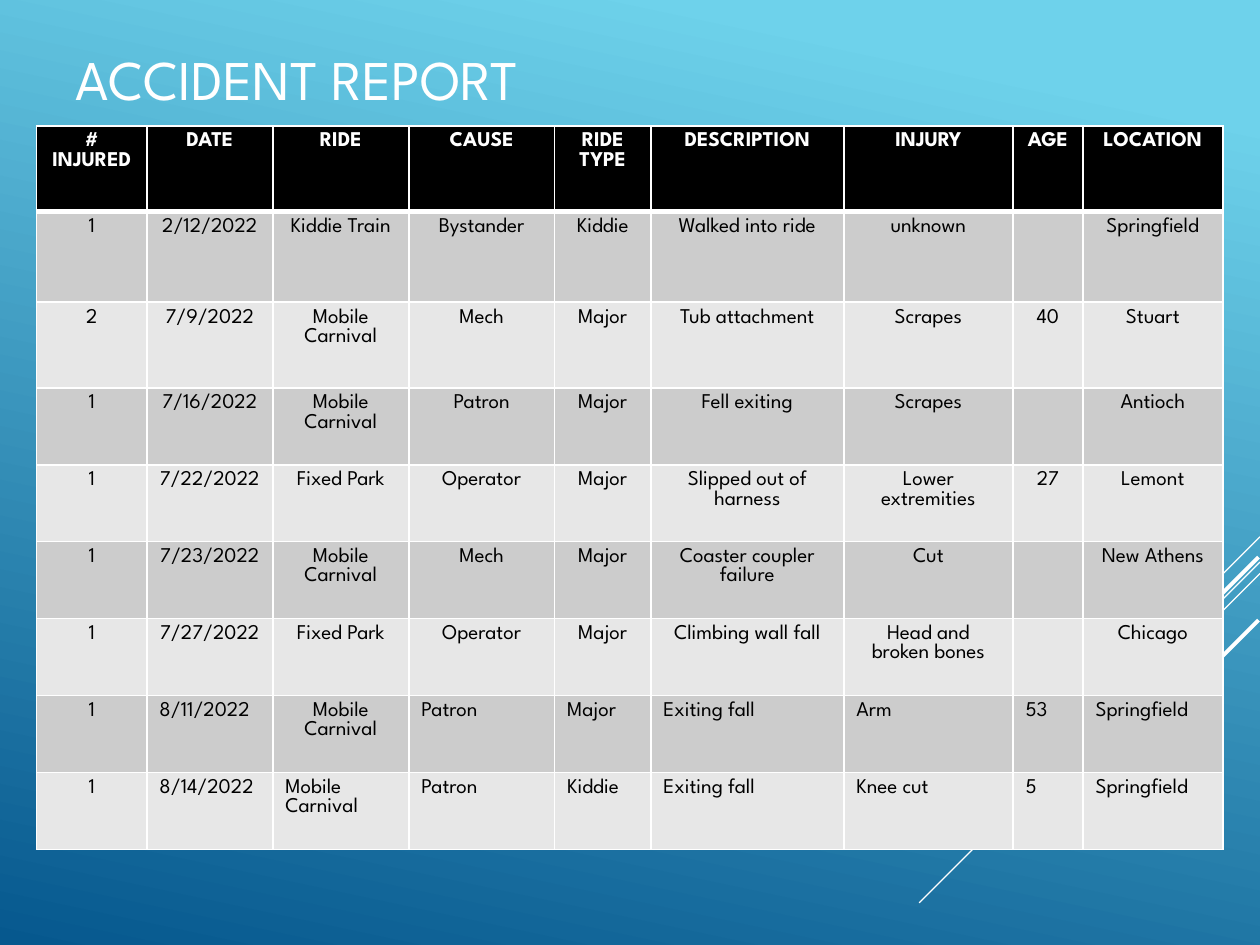
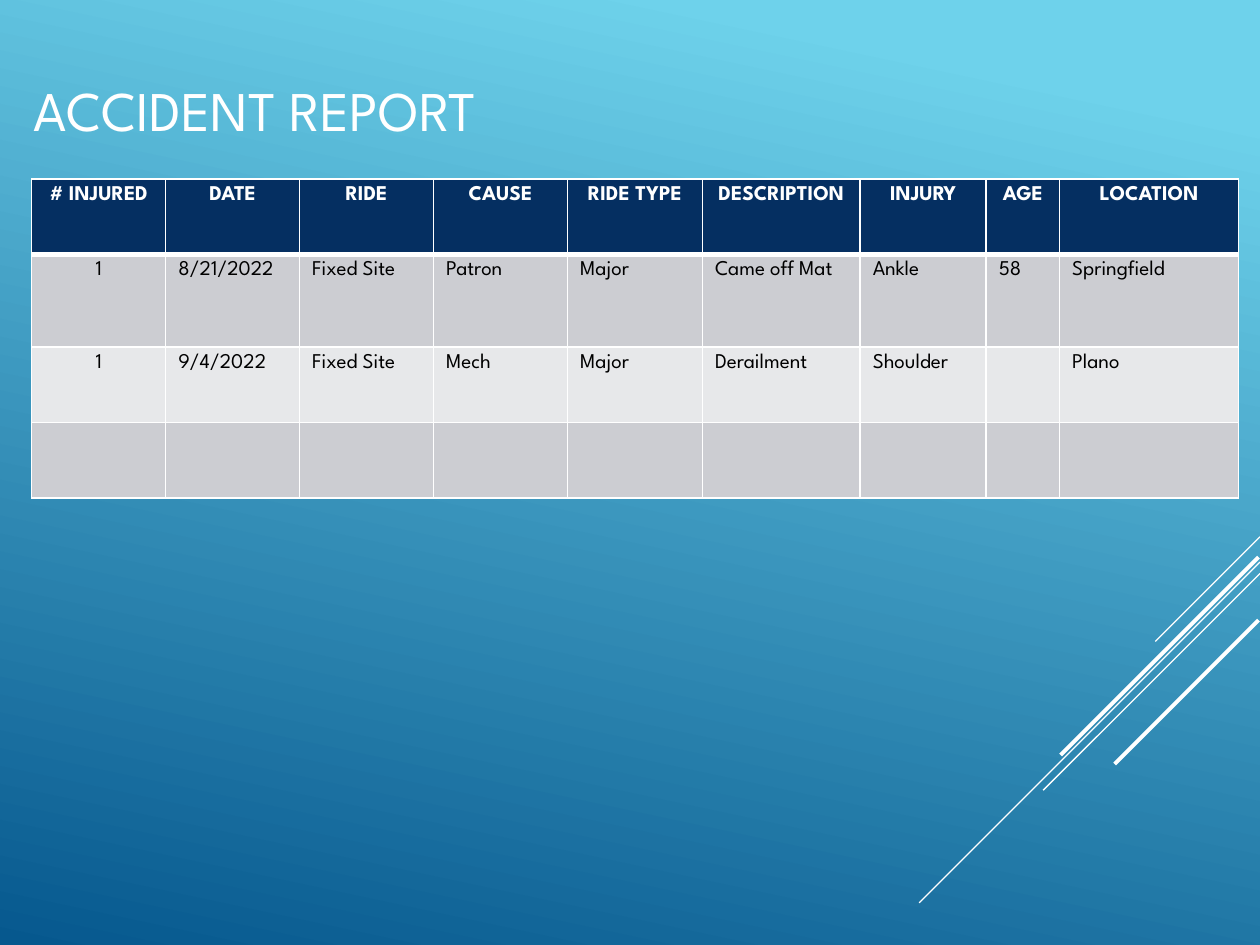
from pptx import Presentation
from pptx.dml.color import RGBColor as Rgb
from pptx.enum.shapes import MSO_CONNECTOR as Link
from pptx.enum.text import MSO_ANCHOR as Anchor, PP_ALIGN as Align
from pptx.oxml import parse_xml as to_xml
from pptx.oxml.ns import nsdecls
from pptx.util import Cm, Pt

WHITE = Rgb(0xFF, 0xFF, 0xFF)
BLACK = Rgb(0, 0, 0)
NAVY = Rgb(0x05, 0x2F, 0x61)
SKY = Rgb(0x6E, 0xD2, 0xEB)
DEEP = Rgb(0x06, 0x58, 0x8E)
GREYS = Rgb(0xCC, 0xCC, 0xCC), Rgb(0xE7, 0xE7, 0xE7)
COOLS = Rgb(0xCC, 0xCD, 0xD2), Rgb(0xE7, 0xE8, 0xEA)

FACE = "League Spartan"
TITLE = {"name": FACE, "size": Pt(32), "bold": False}
HEAD = {"name": FACE, "size": Pt(12), "bold": True}
BODY = {"name": FACE, "size": Pt(12), "bold": False}
SIDES = {"c": Align.CENTER, "l": Align.LEFT}
MID = "c" * 9
FIRST = "c" + "l" * 8
MIXED = "clc" + "l" * 6

HEADS = ("# INJURED", "DATE", "RIDE", "CAUSE", "RIDE TYPE",
         "DESCRIPTION", "INJURY", "AGE", "LOCATION")

PAGES = [
    {
        "title": "ACCIDENT REPORT", "box": (1.27, 0.2, 22.86, 2.74),
        "at": (0.74, 2.54), "top": BLACK, "bands": GREYS,
        "cols": (2.22, 2.54, 2.74, 2.94, 1.94, 3.89, 3.41, 1.41, 2.82),
        "rows": (1.73, 1.82, 1.73) + (1.55,) * 6,
        "data": [
            (MID, "1", "2/12/2022", "Kiddie Train", "Bystander", "Kiddie",
             "Walked into ride", "unknown", "", "Springfield"),
            (MID, "2", "7/9/2022", "Mobile Carnival", "Mech", "Major",
             "Tub attachment", "Scrapes", "40", "Stuart"),
            (MID, "1", "7/16/2022", "Mobile Carnival", "Patron", "Major",
             "Fell exiting", "Scrapes", "", "Antioch"),
            (MID, "1", "7/22/2022", "Fixed Park", "Operator", "Major",
             "Slipped out of harness", "Lower extremities", "27", "Lemont"),
            (MID, "1", "7/23/2022", "Mobile Carnival", "Mech", "Major",
             "Coaster coupler failure", "Cut", "", "New Athens"),
            (MID, "1", "7/27/2022", "Fixed Park", "Operator", "Major",
             "Climbing wall fall", "Head and broken bones", "", "Chicago"),
            (MIXED, "1", "8/11/2022", "Mobile Carnival", "Patron", "Major",
             "Exiting fall", "Arm", "53", "Springfield"),
            (FIRST, "1", "8/14/2022", "Mobile Carnival", "Patron", "Kiddie",
             "Exiting fall", "Knee cut", "5", "Springfield"),
        ],
    },
    {
        "title": "ACCIDENT REPORT", "box": (0.43, 0.08, 18.21, 4.24),
        "at": (0.64, 3.61), "top": NAVY, "bands": COOLS,
        "cols": (2.7,) * 4 + (2.72, 3.18, 2.54, 1.48, 3.61),
        "rows": (1.52, 1.87, 1.52, 1.52),
        "data": [
            (FIRST, "1", "8/21/2022", "Fixed Site", "Patron", "Major",
             "Came off Mat", "Ankle", "58", "Springfield"),
            (FIRST, "1", "9/4/2022", "Fixed Site", "Mech", "Major",
             "Derailment", "Shoulder", "", "Plano"),
            (FIRST,) + ("",) * 9,
        ],
    },
]

RAYS = [
    (25.4, 10.82, 2.11, 0.75),
    (25.4, 11.33, 6.87, 0.75),
    (25.4, 11.56, 4.37, 0.75),
    (25.37, 11.23, 3.99, 2.25),
    (25.37, 12.5, 2.9, 2.25),
]


def style(font, look, ink):
    for key, val in look.items():
        setattr(font, key, val)
    font.color.rgb = ink


def paint(slide):
    fill = slide.background.fill
    fill.gradient()
    fill.gradient_angle = 258
    for stop, ink, pos in zip(fill.gradient_stops, (SKY, DEEP), (0.1, 1)):
        stop.color.rgb = ink
        stop.position = pos
    for x, y, run, wide in RAYS:
        ray = slide.shapes.add_connector(
            Link.STRAIGHT, Cm(x), Cm(y), Cm(x - run), Cm(y + run))
        ray.line.color.rgb = WHITE
        ray.line.width = Pt(wide)
        ray._element.spPr.append(to_xml(f"<a:effectLst {nsdecls('a')}/>"))


def name(slide, text, box):
    frame = slide.shapes.add_textbox(*map(Cm, box)).text_frame
    frame.word_wrap = True
    frame.vertical_anchor = Anchor.MIDDLE
    run = frame.paragraphs[0].add_run()
    run.text = text
    style(run.font, TITLE, WHITE)


def edge(cell, row):
    sizes = {"L": 1, "R": 1, "T": 3 if row == 1 else 1, "B": 1 if row else 3}
    props = cell._tc.get_or_add_tcPr()
    for i, (side, wide) in enumerate(sizes.items()):
        props.insert(i, to_xml(
            f'<a:ln{side} {nsdecls("a")} w="{Pt(wide)}"><a:solidFill>'
            f'<a:srgbClr val="{WHITE}"/></a:solidFill></a:ln{side}>'))


def grid(slide, page):
    cols, rows = page["cols"], page["rows"]
    table = slide.shapes.add_table(
        len(rows), len(cols), *map(Cm, page["at"]),
        Cm(sum(cols)), Cm(sum(rows))).table
    for col, wide in zip(table.columns, cols):
        col.width = Cm(wide)
    for row, high in zip(table.rows, rows):
        row.height = Cm(high)
    for r, (sides, *texts) in enumerate([(MID, *HEADS)] + page["data"]):
        look, ink, back = ((BODY, BLACK, page["bands"][(r - 1) % 2]) if r
                           else (HEAD, WHITE, page["top"]))
        for c, (side, text) in enumerate(zip(sides, texts)):
            cell = table.cell(r, c)
            cell.fill.solid()
            cell.fill.fore_color.rgb = back
            edge(cell, r)
            para = cell.text_frame.paragraphs[0]
            para.alignment = SIDES[side]
            if text:
                run = para.add_run()
                run.text = text
                style(run.font, look, ink)


def main():
    deck = Presentation()
    deck.slide_width, deck.slide_height = Cm(25.4), Cm(19.05)
    for page in PAGES:
        slide = deck.slides.add_slide(deck.slide_layouts[6])
        paint(slide)
        name(slide, page["title"], page["box"])
        grid(slide, page)
    deck.save("out.pptx")


if __name__ == "__main__":
    main()
